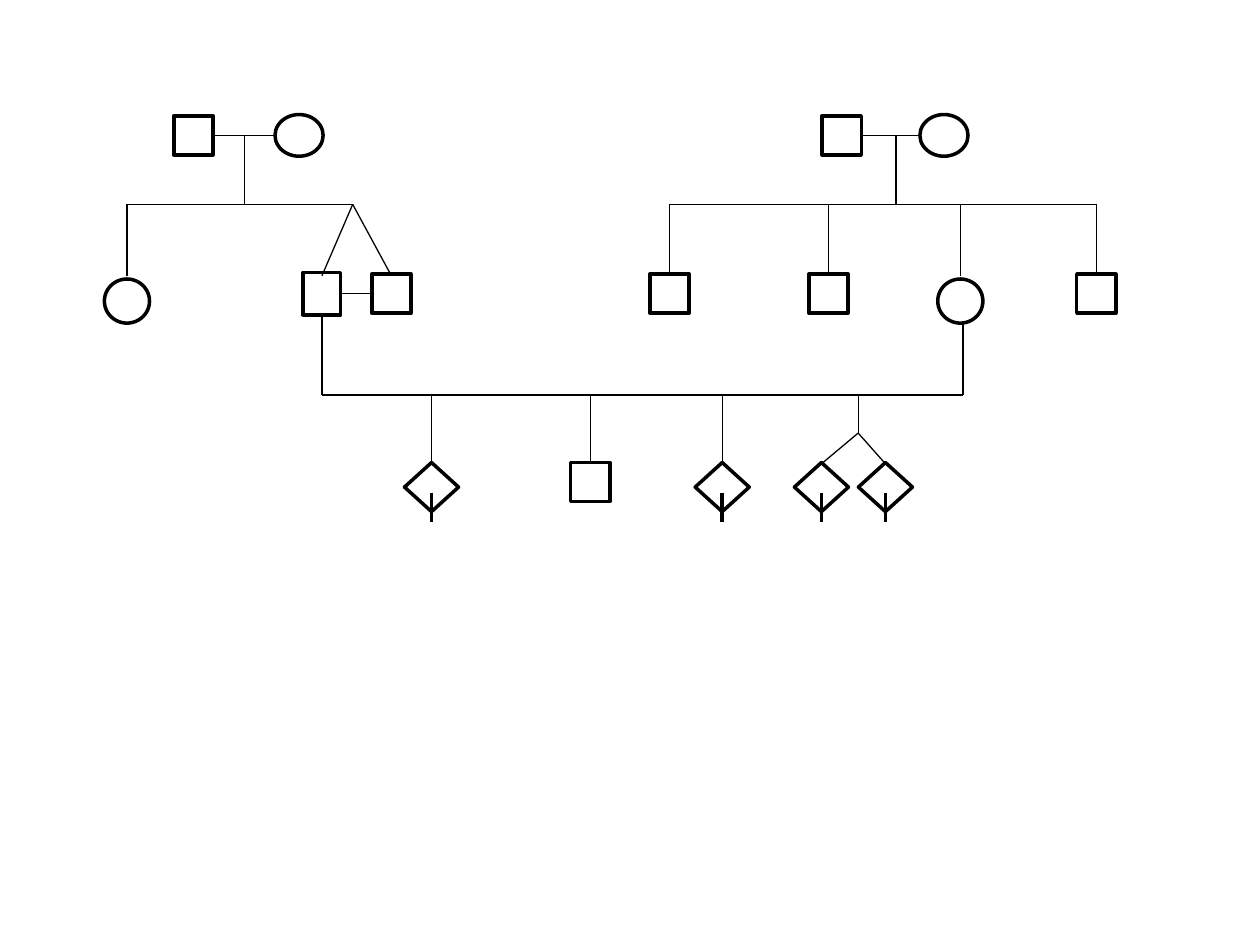
from dataclasses import dataclass

from lxml import etree
from pptx import Presentation
from pptx.dml.color import RGBColor
from pptx.enum.shapes import MSO_CONNECTOR, MSO_SHAPE
from pptx.oxml.ns import qn
from pptx.util import Cm, Pt

SQUARE = MSO_SHAPE.RECTANGLE
CIRCLE = MSO_SHAPE.OVAL
DIAMOND = MSO_SHAPE.DIAMOND
STRAIGHT = MSO_CONNECTOR.STRAIGHT


@dataclass(frozen=True)
class Theme:
    ink: RGBColor = RGBColor(0, 0, 0)
    symbol_width: float = 2
    link_width: float = 0.75
    stroke_width: float = 2.25
    # Symbol sizes in centimetres
    square: tuple = (0.79, 0.79)
    twin: tuple = (0.76, 0.86)
    mother: tuple = (0.97, 0.84)
    circle: tuple = (0.91, 0.89)
    diamond: tuple = (1.09, 0.99)


class Pedigree:
    """Draws pedigree symbols; every position is in centimetres."""

    def __init__(self, slide, theme):
        self.slide = slide
        self.theme = theme

    def symbol(self, kind, x, y, size, shapes=None):
        """Outline symbol centred on x, y."""
        width, height = size
        shapes = shapes or self.slide.shapes
        shape = shapes.add_shape(kind, Cm(x - width / 2), Cm(y - height / 2),
                                 Cm(width), Cm(height))
        shape.shadow.inherit = False
        shape.fill.background()
        shape.line.color.rgb = self.theme.ink
        shape.line.width = Pt(self.theme.symbol_width)

    def line(self, x1, y1, x2, y2, width=None, shapes=None):
        shapes = shapes or self.slide.shapes
        link = shapes.add_connector(STRAIGHT, Cm(x1), Cm(y1), Cm(x2), Cm(y2))
        link.line.color.rgb = self.theme.ink
        link.line.width = Pt(width or self.theme.link_width)
        etree.SubElement(link._element.spPr, qn("a:effectLst"))

    def couple(self, father_x, mother_x, y, drop_x, sibship_y):
        """Father, mother, the line between them and the line of descent."""
        theme = self.theme
        self.symbol(SQUARE, father_x, y, theme.square)
        self.symbol(CIRCLE, mother_x, y, theme.mother)
        self.line(father_x + theme.square[0] / 2, y,
                  mother_x - theme.mother[0] / 2, y)
        self.line(drop_x, y, drop_x, sibship_y)

    def twin_fork(self, x, y, twin_xs, twin_y):
        for twin_x in twin_xs:
            self.line(x, y, twin_x, twin_y)

    def marked_diamond(self, x, y):
        """Diamond with a short vertical stroke through its lower point."""
        group = self.slide.shapes.add_group_shape()
        self.symbol(DIAMOND, x, y, self.theme.diamond, group.shapes)
        self.line(x, y + 0.11, x, y + 0.7, self.theme.stroke_width, group.shapes)


def main():
    deck = Presentation()
    deck.slide_width, deck.slide_height = Cm(25.4), Cm(19.05)
    theme = Theme()
    page = Pedigree(deck.slides.add_slide(deck.slide_layouts[6]), theme)

    # First generation: both pairs of grandparents
    parent_y, sibship_y = 2.73, 4.12
    page.couple(3.9, 6.03, parent_y, 4.93, sibship_y)
    page.couple(16.97, 19.03, parent_y, 18.06, sibship_y)

    # Second generation, left: a sister and twin brothers
    square_y, circle_y, drop_end = 5.92, 6.07, 5.56
    sister_x, fork_x, twin_xs = 2.56, 7.11, (6.49, 7.89)
    page.line(sister_x, sibship_y, fork_x, sibship_y)
    page.line(sister_x, sibship_y, sister_x, drop_end)
    page.symbol(CIRCLE, sister_x, circle_y, theme.circle)
    page.twin_fork(fork_x, sibship_y, twin_xs, drop_end)
    page.symbol(SQUARE, twin_xs[0], square_y, theme.twin)
    page.symbol(SQUARE, twin_xs[1], square_y, theme.square)
    page.line(twin_xs[0] + theme.twin[0] / 2, square_y,
              twin_xs[1] - theme.square[0] / 2, square_y)

    # Second generation, right: three brothers and a sister
    brother_xs, mother_x = (13.5, 16.7, 22.1), 19.36
    page.line(brother_xs[0], sibship_y, brother_xs[-1], sibship_y)
    for x in brother_xs:
        page.line(x, sibship_y, x, drop_end)
        page.symbol(SQUARE, x, square_y, theme.square)
    page.line(mother_x, sibship_y, mother_x, drop_end)
    page.symbol(CIRCLE, mother_x, circle_y, theme.circle)

    # Union of the two families
    union_y, father_x, union_right = 7.96, twin_xs[0], 19.41
    page.line(father_x, square_y + theme.twin[1] / 2, father_x, union_y)
    page.line(union_right, circle_y + theme.circle[1] / 2, union_right, union_y)
    page.line(father_x, union_y, union_right, union_y)

    # Third generation: three single children and a pair of twins
    child_top, child_y, fork_y = 9.35, 9.82, 8.73
    son_x, single_xs = 11.9, (8.7, 14.56)
    fork_x, twin_xs = 17.3, (16.56, 17.85)
    for x in (*single_xs, son_x):
        page.line(x, union_y, x, child_top)
    page.symbol(SQUARE, son_x, 9.72, theme.square)
    page.line(fork_x, union_y, fork_x, fork_y)
    page.twin_fork(fork_x, fork_y, twin_xs, child_top)
    for x in single_xs + twin_xs:
        page.marked_diamond(x, child_y)

    deck.save("out.pptx")


if __name__ == "__main__":
    main()
